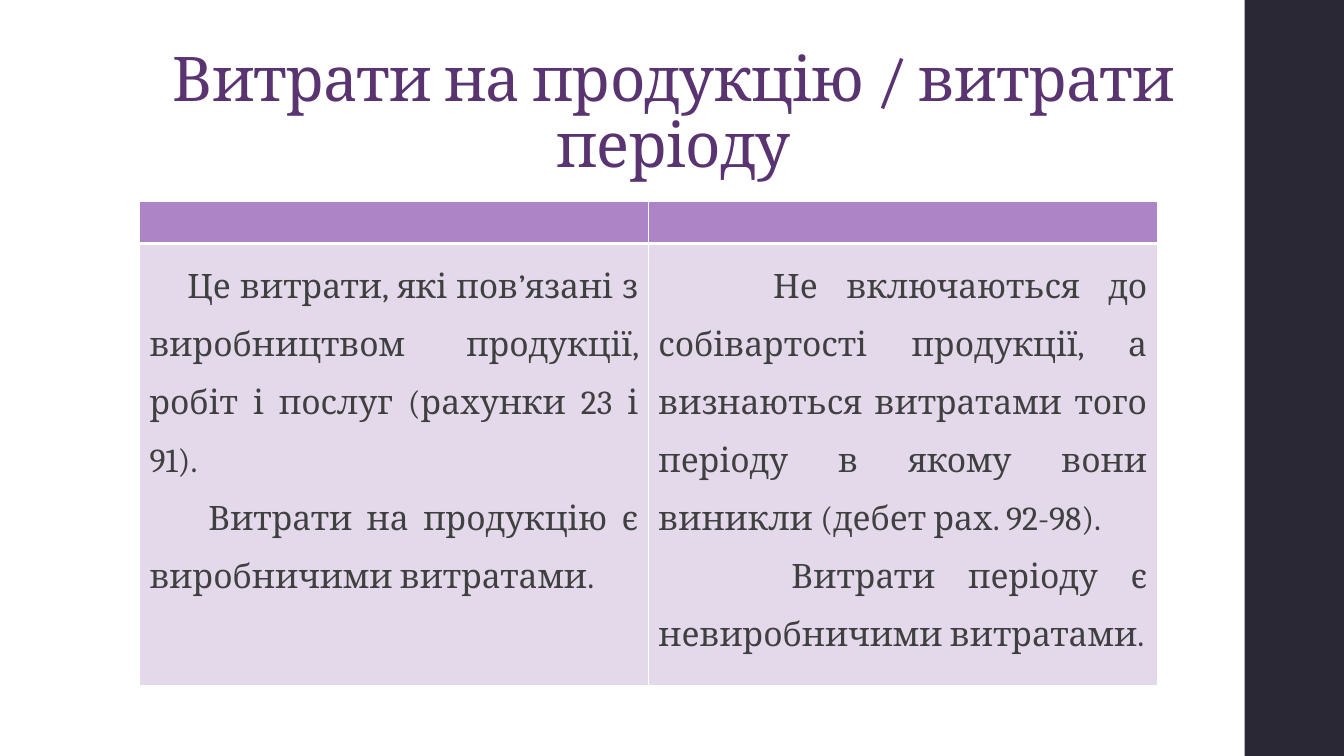
import dataclasses

import lxml.etree
import pptx
import pptx.dml.color
import pptx.enum.shapes
import pptx.enum.text
import pptx.oxml.ns
import pptx.util

Pt = pptx.util.Pt
ALIGN = pptx.enum.text.PP_ALIGN
ANCHOR = pptx.enum.text.MSO_ANCHOR


@dataclasses.dataclass(frozen=True)
class Theme:
    font: str = "Cambria"
    band: str = "292834"
    title: str = "5A3471"
    text: str = "404040"
    header: str = "AD84C6"
    body: str = "E3D9EA"
    border: str = "FFFFFF"
    title_size: int = 44
    body_size: int = 24


THEME = Theme()
TITLE = "Витрати на продукцію / витрати періоду"

# Each column: paragraphs with their first-line indent in points
COLUMNS = [
    [
        ("Це витрати, які пов’язані з виробництвом продукції, робіт і послуг (рахунки 23 і 91).", 27),
        ("Витрати на продукцію є виробничими витратами.", 42),
    ],
    [
        ("Не включаються до собівартості продукції, а визнаються витратами того періоду "
         "в якому вони виникли (дебет рах. 92-98).", 82),
        ("Витрати періоду є невиробничими витратами.", 95),
    ],
]


def rgb(value):
    return pptx.dml.color.RGBColor.from_string(value)


def format_paragraph(paragraph, size, color, alignment, line_spacing):
    paragraph.alignment = alignment
    paragraph.line_spacing = line_spacing
    for run in paragraph.runs:
        run.font.name = THEME.font
        run.font.size = Pt(size)
        run.font.color.rgb = rgb(color)


def add_band(slide, left, top, width, height):
    shape = slide.shapes.add_shape(
        pptx.enum.shapes.MSO_SHAPE.RECTANGLE, Pt(left), Pt(top), Pt(width), Pt(height))
    shape.shadow.inherit = False
    shape.fill.solid()
    shape.fill.fore_color.rgb = rgb(THEME.band)
    shape.line.fill.background()


def add_title(slide, text, left, top, width, height):
    text_frame = slide.shapes.add_textbox(Pt(left), Pt(top), Pt(width), Pt(height)).text_frame
    text_frame.word_wrap = True
    text_frame.vertical_anchor = ANCHOR.BOTTOM
    text_frame.text = text
    paragraph = text_frame.paragraphs[0]
    format_paragraph(paragraph, THEME.title_size, THEME.title, ALIGN.CENTER, 0.9)
    # Slightly tightened letter spacing
    paragraph.runs[0].font._element.set("spc", "-50")


def set_borders(cell, widths):
    """Set the border widths in points, in the order left, right, top, bottom."""
    properties = cell._tc.get_or_add_tcPr()
    for position, (side, width) in enumerate(zip("LRTB", widths)):
        line = lxml.etree.Element(pptx.oxml.ns.qn(f"a:ln{side}"), w=str(int(Pt(width))))
        fill = lxml.etree.SubElement(line, pptx.oxml.ns.qn("a:solidFill"))
        lxml.etree.SubElement(fill, pptx.oxml.ns.qn("a:srgbClr"), val=THEME.border)
        properties.insert(position, line)


def style_cell(cell, fill, border_widths):
    cell.fill.solid()
    cell.fill.fore_color.rgb = rgb(fill)
    set_borders(cell, border_widths)


def fill_cell(cell, entries):
    cell.text_frame.text = "\n".join(text for text, indent in entries)
    for paragraph, (text, indent) in zip(cell.text_frame.paragraphs, entries):
        format_paragraph(paragraph, THEME.body_size, THEME.text, ALIGN.JUSTIFY, 1.5)
        paragraph._p.get_or_add_pPr().set("indent", str(int(Pt(indent))))


def add_cost_table(slide, columns, left, top, width, row_heights):
    table = slide.shapes.add_table(
        len(row_heights), len(columns), Pt(left), Pt(top), Pt(width), Pt(sum(row_heights))).table
    for row, height in zip(table.rows, row_heights):
        row.height = Pt(height)
    for index, entries in enumerate(columns):
        style_cell(table.cell(0, index), THEME.header, (1, 1, 1, 3))
        style_cell(table.cell(1, index), THEME.body, (1, 1, 3, 1))
        fill_cell(table.cell(1, index), entries)


def main():
    presentation = pptx.Presentation()
    presentation.slide_width = Pt(960)
    presentation.slide_height = Pt(540)
    slide = presentation.slides.add_slide(presentation.slide_layouts[6])

    # Side band
    add_band(slide, 889, 0, 71, 540)
    # Heading
    add_title(slide, TITLE, 99.4, 29, 763, 104)
    # Comparison of the two kinds of costs
    add_cost_table(slide, COLUMNS, 99.6, 144, 727, (30, 315.4))

    presentation.save("out.pptx")


if __name__ == "__main__":
    main()
